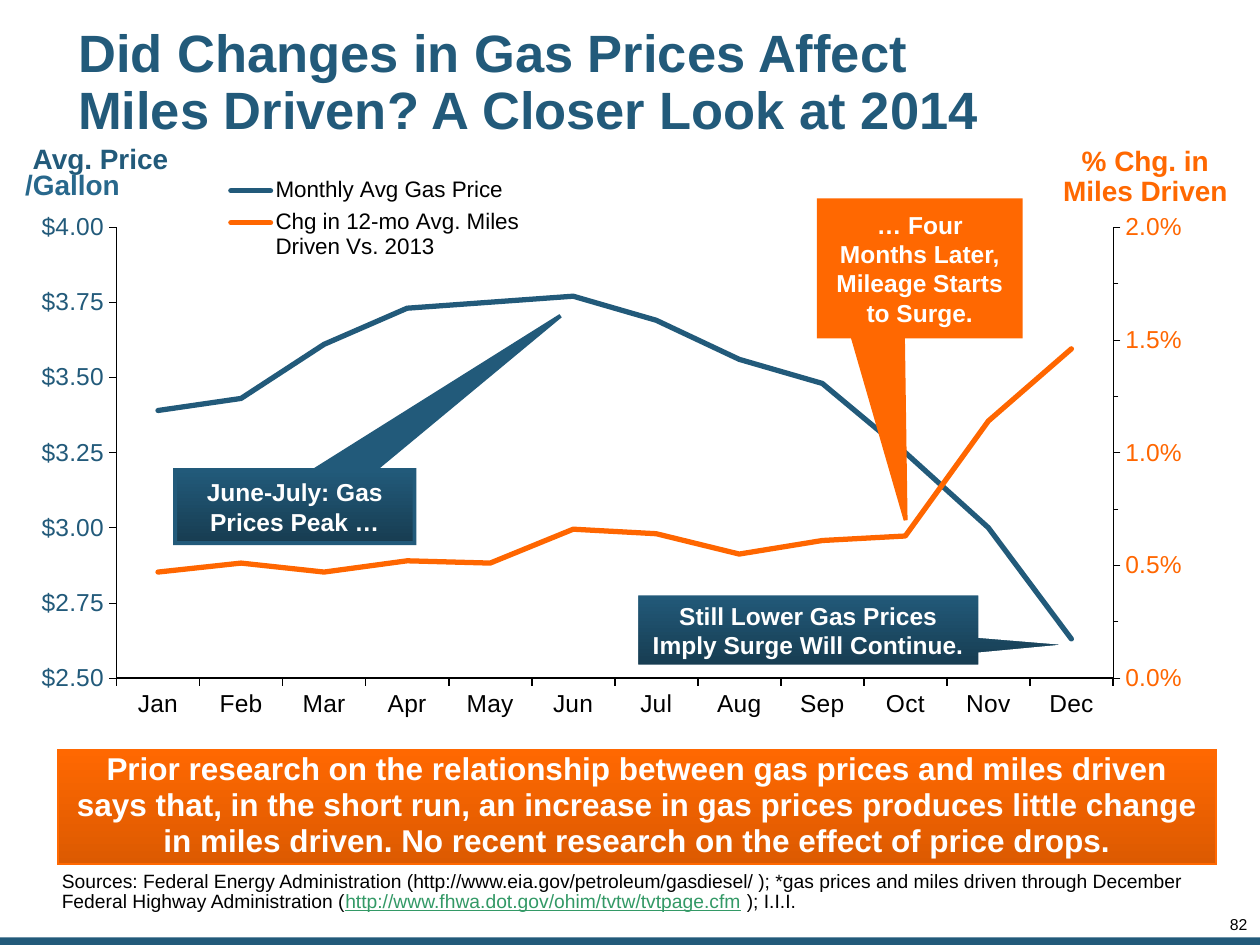
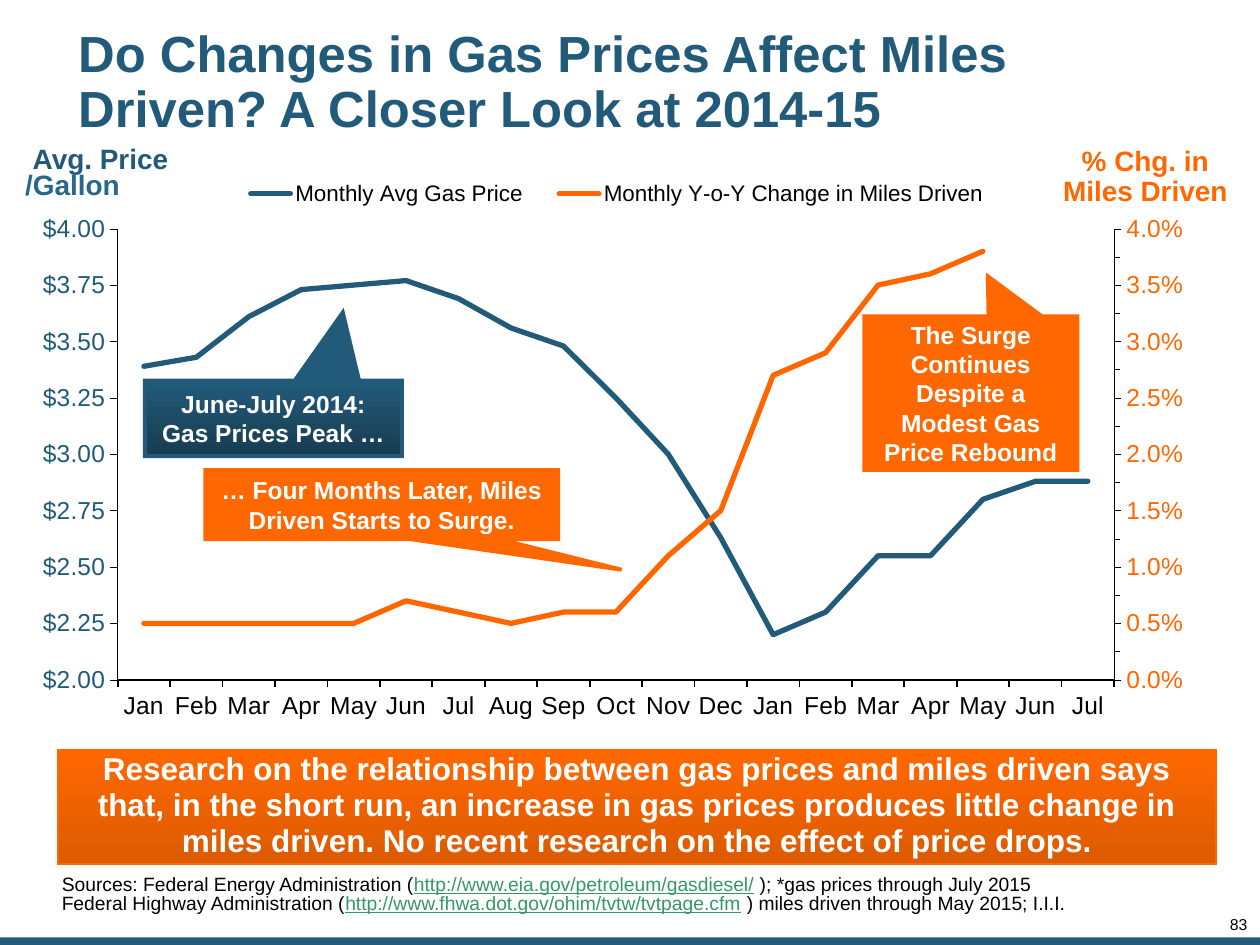
from copy import deepcopy
from dataclasses import dataclass

from lxml import etree
from pptx import Presentation
from pptx.chart.axis import CategoryAxis, ValueAxis
from pptx.chart.data import CategoryChartData
from pptx.dml.color import RGBColor
from pptx.enum.chart import XL_CHART_TYPE, XL_LEGEND_POSITION, XL_TICK_LABEL_POSITION, XL_TICK_MARK
from pptx.enum.shapes import MSO_SHAPE
from pptx.enum.text import MSO_ANCHOR, PP_ALIGN
from pptx.oxml.ns import qn
from pptx.util import Inches, Pt

LEFT, CENTER, RIGHT = PP_ALIGN.LEFT, PP_ALIGN.CENTER, PP_ALIGN.RIGHT
TOP, MIDDLE, BOTTOM = MSO_ANCHOR.TOP, MSO_ANCHOR.MIDDLE, MSO_ANCHOR.BOTTOM
RECT, CALLOUT = MSO_SHAPE.RECTANGLE, MSO_SHAPE.RECTANGULAR_CALLOUT
LINE_CHART = XL_CHART_TYPE.LINE
LEGEND_RIGHT = XL_LEGEND_POSITION.RIGHT
LABELS_LOW, LABELS_NEXT = XL_TICK_LABEL_POSITION.LOW, XL_TICK_LABEL_POSITION.NEXT_TO_AXIS
TICK_OUT = XL_TICK_MARK.OUTSIDE

FONT = "Arial"
BLUE, STEEL, DARK_BLUE = "225A7A", "28688C", "173C51"
ORANGE, AXIS_ORANGE, DARK_ORANGE = "FF6801", "FF6600", "DC5A01"
BLACK, WHITE, LINK_GREEN = "000000", "FFFFFF", "339966"
BLUE_FADE, ORANGE_FADE = (BLUE, DARK_BLUE), (ORANGE, DARK_ORANGE)

MONTHS = ["Jan", "Feb", "Mar", "Apr", "May", "Jun", "Jul", "Aug", "Sep", "Oct", "Nov", "Dec"]
PRICES_2014 = [3.39, 3.43, 3.61, 3.73, 3.75, 3.77, 3.69, 3.56, 3.48, 3.25, 3, 2.63]
PRICES_2015 = [2.2, 2.3, 2.55, 2.55, 2.8, 2.88, 2.88]
MILES_2014 = [0.0047, 0.0051, 0.0047, 0.0052, 0.0051, 0.0066,
              0.0064, 0.0055, 0.0061, 0.0063, 0.0114, 0.0146]
MILES_2014_15 = [0.005, 0.005, 0.005, 0.005, 0.005, 0.007, 0.006, 0.005, 0.006, 0.006,
                 0.011, 0.015, 0.027, 0.029, 0.035, 0.036, 0.038, None, None]

EIA = "http://www.eia.gov/petroleum/gasdiesel/"
FHWA = "http://www.fhwa.dot.gov/ohim/tvtw/tvtpage.cfm"
FINDING = ("esearch on the relationship between gas prices and miles driven says that, in the "
           "short run, an increase in gas prices produces little change in miles driven. "
           "No recent research on the effect of price drops.")

Box = tuple[float, float, float, float]


@dataclass
class Callout:
    text: str
    box: Box
    tip: tuple[float, float]
    fill: tuple[str, ...]
    line: str


@dataclass
class GasSlide:
    number: str
    title: str
    title_size: int
    months: list[str]
    prices: list[float]
    miles: list[float | None]
    miles_name: str
    price_min: float
    miles_max: float
    plot: Box
    legend: Box
    callouts: list[Callout]
    finding: str
    sources: list[str]
    sources_top: float


SLIDES = [
    GasSlide(
        "82", "Did Changes in Gas Prices Affect Miles Driven? A Closer Look at 2014", 30,
        MONTHS, PRICES_2014, MILES_2014, "Chg in 12-mo Avg. Miles Driven Vs. 2013", 2.5, 0.02,
        (0.071, 0.099, 0.845, 0.801), (0.15, 0.0, 0.28, 0.17),
        [Callout("… Four Months Later, Mileage Starts to Surge.",
                 (6.5, 1.59, 1.6, 1.08), (-0.07, 1.85), (ORANGE,), ORANGE),
         Callout("June-July: Gas Prices Peak …",
                 (1.39, 3.73, 1.9, 0.58), (1.11, -2.61), BLUE_FADE, BLUE),
         Callout("Still Lower Gas Prices Imply Surge Will Continue.",
                 (5.05, 4.71, 2.73, 0.58), (0.8, 0.2), BLUE_FADE, WHITE)],
        "Prior r" + FINDING,
        [f"Sources: Federal Energy Administration ({EIA} ); "
         "*gas prices and miles driven through December\nFederal Highway Administration (",
         FHWA, " ); I.I.I."], 6.92),
    GasSlide(
        "83", "Do Changes in Gas Prices Affect Miles Driven? A Closer Look at 2014-15", 29,
        MONTHS + MONTHS[:7], PRICES_2014 + PRICES_2015, MILES_2014_15,
        "Monthly Y-o-Y Change in Miles Driven", 2, 0.04,
        (0.072, 0.102, 0.845, 0.801), (0.16, 0.0, 0.67, 0.08),
        [Callout("… Four Months Later, Miles Driven Starts to Surge.",
                 (1.63, 3.73, 2.8, 0.55), (0.68, 0.94), (ORANGE,), ORANGE),
         Callout("June-July 2014: Gas Prices Peak …",
                 (1.15, 3.02, 2.04, 0.6), (0.27, -1.4), BLUE_FADE, BLUE),
         Callout("The Surge Continues Despite a Modest Gas Price Rebound",
                 (6.86, 2.51, 1.69, 1.22), (0.08, -0.76), (ORANGE,), ORANGE)],
        "R" + FINDING,
        ["Sources: Federal Energy Administration (", EIA,
         " ); *gas prices through July 2015\nFederal Highway Administration (",
         FHWA, " ) miles driven through May 2015; I.I.I."], 6.94),
]


def rgb(color: str) -> RGBColor:
    return RGBColor.from_string(color)


def inches(box: Box) -> list[int]:
    return [Inches(v) for v in box]


def style_font(font, size: float, color: str, bold: bool = False) -> None:
    font.name, font.size, font.bold = FONT, Pt(size), bold
    font.color.rgb = rgb(color)


def write(sp, parts: str | list[str], *, size: float, color: str, bold: bool = True,
          align=LEFT, anchor=TOP, spacing: float = 1.0, margins: Box = (0, 0, 0, 0)) -> None:
    """Fill a shape with one paragraph; every second part of a list is a web address."""
    tf = sp.text_frame
    tf.word_wrap, tf.vertical_anchor = True, anchor
    tf.margin_left, tf.margin_top, tf.margin_right, tf.margin_bottom = inches(margins)
    p = tf.paragraphs[0]
    p.alignment, p.line_spacing = align, spacing
    for i, part in enumerate([parts] if isinstance(parts, str) else parts):
        is_link = i % 2 == 1
        for j, line in enumerate(part.split("\n")):
            if j:
                p.add_line_break()
            r = p.add_run()
            r.text = line
            style_font(r.font, size, LINK_GREEN if is_link else color, bold)
            if is_link:
                r.font.underline = True


def add_label(slide, text: str | list[str], box: Box, **style) -> None:
    write(slide.shapes.add_textbox(*inches(box)), text, **style)


def add_filled(slide, kind, box: Box, colors: tuple[str, ...],
               line: str | None = None, line_width: float = 1):
    """Add a shape with one flat colour, or two colours fading downwards."""
    sp = slide.shapes.add_shape(kind, *inches(box))
    sp.shadow.inherit = False
    if len(colors) == 1:
        sp.fill.solid()
        sp.fill.fore_color.rgb = rgb(colors[0])
    else:
        sp.fill.gradient()
        sp.fill.gradient_angle = 270
        for stop, color in zip(sp.fill.gradient_stops, colors):
            stop.color.rgb = rgb(color)
    if line:
        sp.line.color.rgb = rgb(line)
        sp.line.width = Pt(line_width)
        ln = sp.element.spPr.find(qn("a:ln"))
        etree.SubElement(ln, qn("a:miter")).set("lim", "800000")
    else:
        sp.line.fill.background()
    return sp


def set_layout(parent, index: int, box: Box, inner: bool = False) -> None:
    """Place the plot area or legend by fractions of the chart's size."""
    for old in parent.findall(qn("c:layout")):
        parent.remove(old)
    layout = etree.Element(qn("c:layout"))
    manual = etree.SubElement(layout, qn("c:manualLayout"))
    settings = [("layoutTarget", "inner")] if inner else []
    settings += [("xMode", "edge"), ("yMode", "edge")]
    settings += [(name, str(value)) for name, value in zip("xywh", box)]
    for name, value in settings:
        etree.SubElement(manual, qn(f"c:{name}")).set("val", value)
    parent.insert(index, layout)


def style_axis(axis, color: str, line_width: float, number_format: str) -> None:
    axis.has_major_gridlines = False
    axis.major_tick_mark = TICK_OUT
    axis.tick_labels.number_format = number_format
    axis.tick_labels.number_format_is_linked = False
    style_font(axis.tick_labels.font, 14, color)
    axis.format.line.color.rgb = rgb(BLACK)
    axis.format.line.width = Pt(line_width)


def set_scale(axis, low: float, high: float, step: float) -> None:
    axis.minimum_scale, axis.maximum_scale, axis.major_unit = low, high, step
    axis.minor_unit = step / 2


def add_right_axis(chart, high: float) -> None:
    """Move the second series to a line chart of its own with an axis on the right."""
    area = chart.plots[0]._element.getparent()
    lines, cat, val = (area.find(qn(f"c:{tag}")) for tag in ("lineChart", "catAx", "valAx"))
    right_lines, right_cat, right_val = (deepcopy(el) for el in (lines, cat, val))
    lines.remove(lines.findall(qn("c:ser"))[1])
    right_lines.remove(right_lines.findall(qn("c:ser"))[0])
    for el in (right_lines, right_cat, right_val):
        for ref in el.iter(qn("c:axId"), qn("c:crossAx")):
            ref.set("val", str(int(ref.get("val")) + 1))
    lines.addnext(right_lines)
    val.addnext(right_val)
    right_val.addnext(right_cat)
    right_val.find(qn("c:axPos")).set("val", "r")
    right_val.find(qn("c:crosses")).set("val", "max")
    CategoryAxis(right_cat).visible = False
    axis = ValueAxis(right_val)
    style_axis(axis, AXIS_ORANGE, 0.25, "0.0%")
    set_scale(axis, 0, high, 0.005)
    axis.minor_tick_mark = TICK_OUT
    axis.tick_label_position = LABELS_NEXT
    for cross in area.iter(qn("c:crossBetween")):
        cross.set("val", "between")


def add_gas_chart(slide, gas: GasSlide) -> None:
    data = CategoryChartData()
    data.categories = gas.months
    data.add_series("Monthly Avg Gas Price", gas.prices, "0.00")
    data.add_series(gas.miles_name, gas.miles, "0.0%")
    frame = slide.shapes.add_chart(LINE_CHART, *inches((0.26, 1.36, 9.36, 4.47)), data)
    chart = frame.chart
    style_font(chart.font, 14, BLACK)
    chart.has_title = False
    chart.plots[0].vary_by_categories = False
    for series, color in zip(chart.plots[0].series, (BLUE, AXIS_ORANGE)):
        series.smooth = False
        series.format.line.color.rgb = rgb(color)
        series.format.line.width = Pt(3)
        ln = series._element.find(f"{qn('c:spPr')}/{qn('a:ln')}")
        ln.set("cap", "rnd")
        etree.SubElement(ln, qn("a:round"))

    style_axis(chart.category_axis, BLACK, 1, "00")
    style_axis(chart.value_axis, BLUE, 0.25, '"$"#,##0.00')
    set_scale(chart.value_axis, gas.price_min, 4, 0.25)
    chart.category_axis.tick_label_position = LABELS_LOW
    chart.value_axis.tick_label_position = LABELS_LOW
    set_layout(chart.plots[0]._element.getparent(), 0, gas.plot, inner=True)
    add_right_axis(chart, gas.miles_max)

    chart.has_legend = True
    legend = chart.legend
    legend.position = LEGEND_RIGHT
    legend.include_in_layout = False
    style_font(legend.font, 12.8, BLACK)
    set_layout(legend._element, 1, gas.legend)


def build_slide(prs, gas: GasSlide) -> None:
    slide = prs.slides.add_slide(prs.slide_layouts[5])
    title = slide.shapes.title
    title.left, title.top, title.width, title.height = inches((0.57, 0.16, 7.72, 1.01))
    write(title, gas.title, size=gas.title_size, color=BLUE, anchor=MIDDLE,
          spacing=0.9, margins=(0.05,) * 4)
    add_filled(slide, RECT, (0, 7.44, 10, 0.06), (BLUE,))
    add_gas_chart(slide, gas)
    add_label(slide, gas.number, (9.41, 7.28, 0.49, 0.13), size=9, color=BLACK,
              bold=False, align=RIGHT, spacing=0.85)

    axis_title = {"size": 16, "spacing": 0.9}
    add_label(slide, "Avg. Price", (0.26, 1.15, 1.32, 0.24), color=BLUE, **axis_title)
    add_label(slide, "/Gallon", (0.2, 1.36, 1.19, 0.24), color=STEEL, **axis_title)
    add_label(slide, "% Chg. in Miles Driven", (8.29, 1.17, 1.6, 0.48), color=ORANGE,
              align=CENTER, **axis_title)

    add_label(slide, gas.sources, (0.09, gas.sources_top, 9.59, 0.47), size=11, color=BLACK,
              bold=False, anchor=BOTTOM, spacing=0.85, margins=(0.4, 0, 0, 0.15))
    banner = add_filled(slide, RECT, (0.46, 5.95, 9.19, 0.91), ORANGE_FADE, ORANGE)
    write(banner, gas.finding, size=18, color=WHITE, align=CENTER, anchor=MIDDLE,
          spacing=0.95, margins=(0.1, 0.05, 0.1, 0.07))
    for callout in gas.callouts:
        sp = add_filled(slide, CALLOUT, callout.box, callout.fill, callout.line, 2.25)
        sp.adjustments[0], sp.adjustments[1] = callout.tip
        write(sp, callout.text, size=14, color=WHITE, align=CENTER, anchor=MIDDLE,
              margins=(0.1,) * 4)


def main() -> None:
    prs = Presentation()
    prs.slide_width, prs.slide_height = Inches(10), Inches(7.5)
    for gas in SLIDES:
        build_slide(prs, gas)
    prs.save("out.pptx")


if __name__ == "__main__":
    main()
